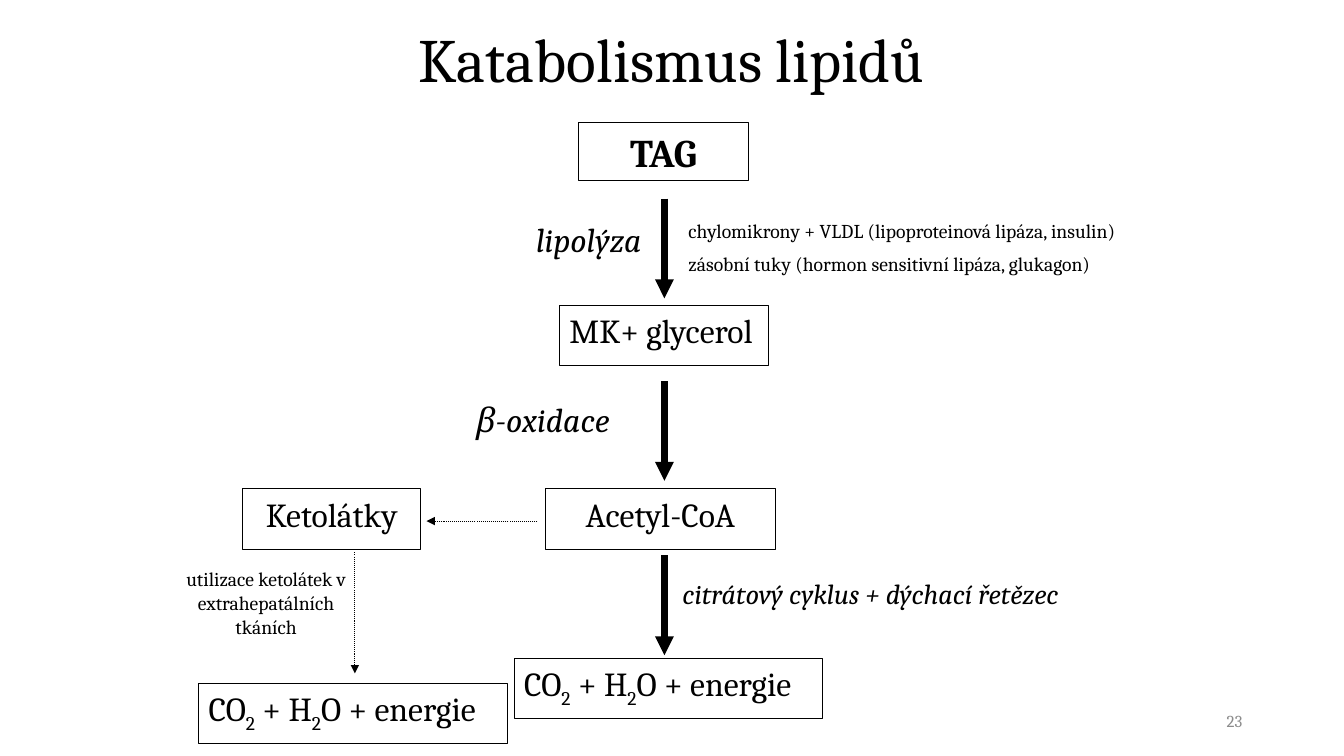
from lxml import etree
from pptx import Presentation
from pptx.dml.color import RGBColor
from pptx.enum.dml import MSO_LINE
from pptx.enum.shapes import MSO_CONNECTOR, MSO_SHAPE
from pptx.enum.text import MSO_ANCHOR as ANCHOR, PP_ALIGN as ALIGN
from pptx.oxml.ns import qn
from pptx.util import Inches, Pt

FONT = "Cambria"
COLORS = {"ink": "000000", "paper": "FFFFFF", "number": "8C8C8C"}


def write(frame, lines, size, align=ALIGN.LEFT, anchor=ANCHOR.TOP,
          bold=False, italic=False, color="ink"):
    """Fill a text frame; each line is a string or a list of (text, baseline) runs."""
    frame.word_wrap = True
    frame.vertical_anchor = anchor
    for i, line in enumerate(lines):
        paragraph = frame.paragraphs[0] if i == 0 else frame.add_paragraph()
        paragraph.alignment = align
        if i:
            paragraph.space_before = Pt(size / 2)
        for text, baseline in [(line, 0)] if isinstance(line, str) else line:
            run = paragraph.add_run()
            run.text = text
            run.font.name = FONT
            run.font.size = Pt(size)
            run.font.bold = bold
            run.font.italic = italic
            run.font.color.rgb = RGBColor.from_string(COLORS[color])
            if baseline:
                run.font._element.set("baseline", str(baseline * 1000))


prs = Presentation()
prs.slide_width, prs.slide_height = Inches(13.33), Inches(7.5)
slide = prs.slides.add_slide(prs.slide_layouts[5])

# Title
title = slide.shapes.title
title.left, title.top = Inches(2.41), Inches(0)
title.width, title.height = Inches(8.5), Inches(1.25)
write(title.text_frame, ["Katabolismus lipidů"], 44, ALIGN.CENTER, ANCHOR.MIDDLE)
title.text_frame.paragraphs[0].line_spacing = 0.9

# Metabolites
end_products = [("CO", 0), ("2", -25), (" + H", 0), ("2", -25), ("O + energie", 0)]
metabolites = [
    ("TAG", 5.74, 1.22, 1.68, 0.57, 28, ALIGN.CENTER),
    ("MK+ glycerol", 5.55, 3.03, 2.07, 0.6, 24, ALIGN.LEFT),
    ("Acetyl-CoA", 5.41, 4.85, 2.28, 0.6, 24, ALIGN.CENTER),
    ("Ketolátky", 2.41, 4.85, 1.76, 0.6, 24, ALIGN.CENTER),
    (end_products, 1.97, 6.78, 3.06, 0.6, 24, ALIGN.LEFT),
    (end_products, 5.1, 6.53, 3.06, 0.6, 24, ALIGN.LEFT),
]
for name, left, top, width, height, size, align in metabolites:
    metabolite = slide.shapes.add_shape(
        MSO_SHAPE.RECTANGLE, Inches(left), Inches(top), Inches(width), Inches(height))
    metabolite.shadow.inherit = False
    metabolite.fill.solid()
    metabolite.fill.fore_color.rgb = RGBColor.from_string(COLORS["paper"])
    metabolite.line.color.rgb = RGBColor.from_string(COLORS["ink"])
    metabolite.line.width = Pt(0.75)
    write(metabolite.text_frame, [name], size, align, bold=name == "TAG")

# Reaction arrows: thick main pathway, dotted ketone branch
reactions = [(6.59, top, 6.59, top + 0.99, 4.5, None) for top in (1.97, 3.78, 5.51)]
reactions += [
    (5.33, 5.17, 4.23, 5.17, 0.75, MSO_LINE.ROUND_DOT),
    (3.52, 5.48, 3.52, 6.68, 0.75, MSO_LINE.ROUND_DOT),
]
for x1, y1, x2, y2, weight, dash in reactions:
    reaction = slide.shapes.add_connector(
        MSO_CONNECTOR.STRAIGHT, Inches(x1), Inches(y1), Inches(x2), Inches(y2))
    reaction.line.color.rgb = RGBColor.from_string(COLORS["ink"])
    reaction.line.width = Pt(weight)
    if dash:
        reaction.line.dash_style = dash
    etree.SubElement(reaction.line._get_or_add_ln(), qn("a:tailEnd"), type="triangle")
    etree.SubElement(reaction._element.spPr, qn("a:effectLst"))

# Process labels, notes and slide number
enzymes = ["chylomikrony + VLDL (lipoproteinová lipáza, insulin)",
           "zásobní tuky (hormon sensitivní lipáza, glukagon)"]
labels = [
    (["lipolýza"], 5.03, 2.12, 1.43, 0.4, 24, {"align": ALIGN.RIGHT, "italic": True}),
    (["β-oxidace"], 4.62, 3.91, 1.89, 0.4, 24, {"italic": True}),
    (["utilizace ketolátek v extrahepatálních tkáních"],
     1.73, 5.58, 1.82, 1, 14, {"align": ALIGN.CENTER}),
    (["citrátový cyklus + dýchací řetězec"], 6.67, 5.67, 4.57, 0.6, 20, {"italic": True}),
    (enzymes, 6.73, 2.12, 5.32, 0.8, 14, {}),
    (["23"], 9.42, 6.95, 3, 0.4, 12,
     {"align": ALIGN.RIGHT, "anchor": ANCHOR.MIDDLE, "color": "number"}),
]
for lines, left, top, width, height, size, style in labels:
    label = slide.shapes.add_textbox(
        Inches(left), Inches(top), Inches(width), Inches(height))
    write(label.text_frame, lines, size, **style)

prs.save("out.pptx")
